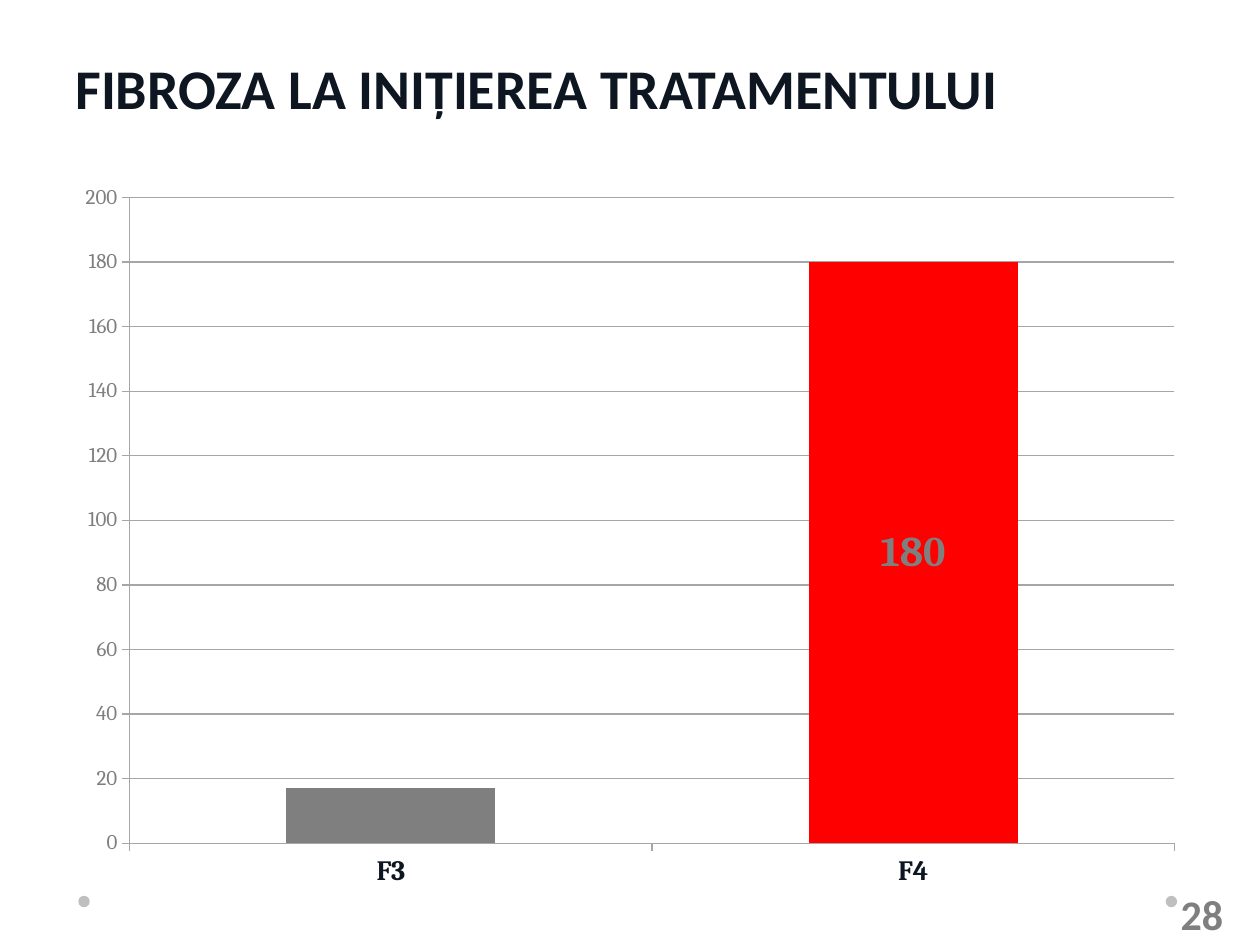
from pptx import Presentation
from pptx.chart import data
from pptx.dml.color import RGBColor
from pptx.enum import chart as charts, shapes, text
from pptx.util import Cm, Pt

COLORS = {"navy": "0D1621", "gray": "7F7F7F", "dot": "BFBFBF", "red": "FF0000", "grid": "A6A6A6"}


def rgb(name):
    return RGBColor.from_string(COLORS[name])


class SlideBuilder:
    heading_font = "Calibri"
    chart_font = "Cambria"

    def __init__(self, slide):
        self.slide = slide

    def style(self, font, name, size, color, bold=False):
        font.name = name
        font.size = Pt(size)
        font.bold = bold
        font.color.rgb = rgb(color)

    def dot(self, left, top, size):
        mark = self.slide.shapes.add_shape(
            shapes.MSO_SHAPE.OVAL, Cm(left), Cm(top), Cm(size), Cm(size))
        mark.shadow.inherit = False
        mark.fill.solid()
        mark.fill.fore_color.rgb = rgb("dot")
        mark.line.fill.background()

    def label(self, wording, left, top, width, height, size, color, inset=0.25, spacing=None):
        frame = self.slide.shapes.add_textbox(
            Cm(left), Cm(top), Cm(width), Cm(height)).text_frame
        frame.word_wrap = True
        frame.vertical_anchor = text.MSO_ANCHOR.MIDDLE
        frame.margin_left = Cm(inset)
        frame.text = wording
        paragraph = frame.paragraphs[0]
        if spacing:
            paragraph.line_spacing = Pt(spacing)
        self.style(paragraph.runs[0].font, self.heading_font, size, color, True)

    def columns(self, stages, counts, highlight, left, top, width, height):
        figures = data.CategoryChartData()
        figures.categories = stages
        figures.add_series("Series 1", counts)
        chart = self.slide.shapes.add_chart(
            charts.XL_CHART_TYPE.COLUMN_STACKED,
            Cm(left), Cm(top), Cm(width), Cm(height), figures).chart
        chart.has_legend = False
        chart.has_title = False
        self.style(chart.font, self.chart_font, 10, "gray")

        plot = chart.plots[0]
        plot.gap_width = 150
        plot.overlap = 100
        plot.vary_by_categories = False
        patients = plot.series[0]
        for fill, color in ((patients.format.fill, "gray"),
                            (patients.points[highlight].format.fill, "red")):
            fill.solid()
            fill.fore_color.rgb = rgb(color)
        labels = patients.data_labels
        labels.show_value = True
        labels.position = charts.XL_LABEL_POSITION.CENTER
        self.style(labels.font, self.chart_font, 24, "gray", True)

        scale = chart.value_axis
        scale.minimum_scale = 0
        scale.maximum_scale = 200
        scale.major_unit = 20
        scale.has_major_gridlines = True
        scale.major_gridlines.format.line.color.rgb = rgb("grid")
        for axis, size, color, bold in ((scale, 12, "gray", False),
                                        (chart.category_axis, 16, "navy", True)):
            axis.major_tick_mark = charts.XL_TICK_MARK.OUTSIDE
            axis.format.line.color.rgb = rgb("grid")
            self.style(axis.tick_labels.font, self.chart_font, size, color, bold)


def main():
    deck = Presentation()
    deck.slide_width = Cm(25.4)
    deck.slide_height = Cm(19.05)
    page = SlideBuilder(deck.slides.add_slide(deck.slide_layouts[6]))
    for left in (23.5, 1.58):
        page.dot(left, 18.06, 0.23)
    page.label("FIBROZA LA INIȚIEREA TRATAMENTULUI",
               1.27, -0.08, 22.86, 3, 32, "navy", spacing=58)
    page.columns(("F3", "F4"), (17, 180), 1, 1.27, 3.45, 22.86, 14.73)
    page.label("28", 23.72, 17.91, 1.55, 1.02, 24, "gray", inset=0.08)
    deck.save("out.pptx")


if __name__ == "__main__":
    main()
